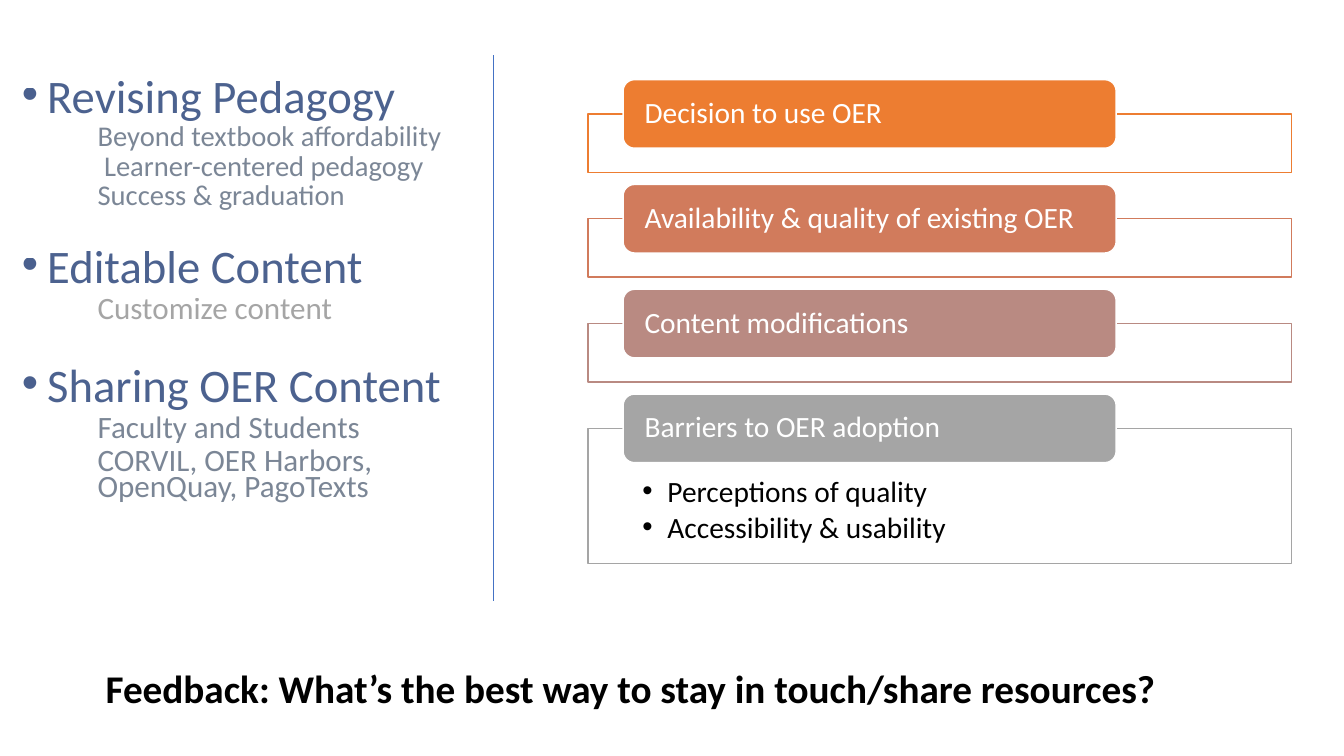
from pptx import Presentation
from pptx.dml.color import RGBColor
from pptx.enum.shapes import MSO_CONNECTOR, MSO_SHAPE
from pptx.enum.text import MSO_ANCHOR, PP_ALIGN
from pptx.oxml.ns import qn
from pptx.util import Inches, Pt
from lxml import etree

COLORS = {"navy": "002060", "slate": "44546A", "gray": "808080", "white": "FFFFFF",
          "black": "000000", "blue": "4472C4"}
FONT = "Calibri"

# heading, space before it, detail colour, detail size, space before details, details
TOPICS = [
    ("Revising Pedagogy", 0, "slate", 20.4, 4,
     ["Beyond textbook affordability", " Learner-centered pedagogy", "Success & graduation"]),
    ("Editable Content", 30, "gray", 22.2, 5, ["Customize content"]),
    ("Sharing OER Content", 33, "slate", 22.2, 5,
     ["Faculty and Students", "CORVIL, OER Harbors, OpenQuay, PagoTexts"]),
]
# title, colour, bullets
STEPS = [
    ("Decision to use OER", "ED7D31", []),
    ("Availability & quality of existing OER", "D17B5C", []),
    ("Content modifications", "B98A82", []),
    ("Barriers to OER adoption", "A5A5A5",
     ["Perceptions of quality", "Accessibility & usability"]),
]
QUESTION = "Feedback: What’s the best way to stay in touch/share resources?"

SLIDE_W, SLIDE_H = 13.33, 7.5
TOPICS_BOX = (0.12, 0.77, 4.6, 4.4)
DIVIDER_X, DIVIDER_TOP, DIVIDER_BOTTOM = 4.89, 0.55, 5.96
QUESTION_BOX = (0.95, 6.54, 10.73, 0.57)
FRAME_X, FRAME_W, FRAME_H, OPEN_FRAME_H = 5.83, 6.98, 0.58, 1.34
TAB_X, TAB_W, TAB_H = 6.18, 4.89, 0.68
STEP_TOP, STEP_PITCH = 0.79, 1.04


def style(paragraph, size, color, alpha=None):
    font = paragraph.font
    font.name, font.size = FONT, Pt(size)
    font.color.rgb = RGBColor.from_string(color)
    if alpha:
        rgb = paragraph._p.pPr.find(".//" + qn("a:srgbClr"))
        etree.SubElement(rgb, qn("a:alpha")).set("val", str(alpha * 1000))


def indent(paragraph, left, bullet=False):
    """Set the left margin; a bullet hangs a quarter inch before it."""
    props = paragraph._p.get_or_add_pPr()
    props.set("marL", str(Inches(left)))
    props.set("indent", str(Inches(-0.25 if bullet else 0)))
    if bullet:
        mark = etree.Element(qn("a:buChar"), char="•")
        font = etree.Element(qn("a:buFont"), typeface="Arial")
        defaults = props.find(qn("a:defRPr"))
        defaults.addprevious(font)
        defaults.addprevious(mark)


def add_paragraph(frame, text):
    first = frame.paragraphs[0]
    paragraph = frame.add_paragraph() if first.runs else first
    paragraph.add_run().text = text
    paragraph.alignment = PP_ALIGN.LEFT
    return paragraph


def add_text_box(slide, box):
    frame = slide.shapes.add_textbox(*map(Inches, box)).text_frame
    frame.word_wrap = True
    return frame


def add_panel(slide, kind, box, fill, line, margins):
    panel = slide.shapes.add_shape(kind, *map(Inches, box))
    panel.shadow.inherit = False
    panel.fill.solid()
    panel.fill.fore_color.rgb = RGBColor.from_string(fill)
    panel.line.color.rgb = RGBColor.from_string(line)
    panel.line.width = Pt(1)
    frame = panel.text_frame
    frame.word_wrap = True
    frame.margin_left = frame.margin_right = Inches(margins[0])
    frame.margin_top, frame.margin_bottom = Inches(margins[1]), Inches(margins[2])
    return frame


def add_topics(slide):
    frame = add_text_box(slide, TOPICS_BOX)
    for heading, gap, color, size, detail_gap, details in TOPICS:
        title = add_paragraph(frame, heading)
        title.line_spacing, title.space_before = 0.7, Pt(gap)
        style(title, 33.3, COLORS["navy"], 70)
        indent(title, 0.25, bullet=True)
        for detail in details:
            line = add_paragraph(frame, detail)
            line.line_spacing, line.space_before = 0.7, Pt(detail_gap)
            style(line, size, COLORS[color], 70)
            indent(line, 0.75)


def add_step(slide, row, title, color, bullets):
    top = STEP_TOP + row * STEP_PITCH
    height = OPEN_FRAME_H if bullets else FRAME_H
    body = add_panel(slide, MSO_SHAPE.RECTANGLE, (FRAME_X, top + TAB_H / 2, FRAME_W, height),
                     COLORS["white"], color, (0.54, 0.48, 0.16))
    body.vertical_anchor = MSO_ANCHOR.TOP
    for bullet in bullets:
        line = add_paragraph(body, bullet)
        line.line_spacing, line.space_after = 0.9, Pt(3)
        style(line, 21, COLORS["black"])
        indent(line, 0.25, bullet=True)
    tab = add_panel(slide, MSO_SHAPE.ROUNDED_RECTANGLE, (TAB_X, top, TAB_W, TAB_H),
                    color, COLORS["white"], (0.18, 0, 0))
    tab.vertical_anchor = MSO_ANCHOR.MIDDLE
    label = add_paragraph(tab, title)
    label.line_spacing = 0.9
    style(label, 21, COLORS["white"])


def add_divider(slide):
    ends = (DIVIDER_X, DIVIDER_TOP, DIVIDER_X, DIVIDER_BOTTOM)
    divider = slide.shapes.add_connector(MSO_CONNECTOR.STRAIGHT, *map(Inches, ends))
    divider.line.color.rgb = RGBColor.from_string(COLORS["blue"])
    divider.line.width = Pt(0.5)
    etree.SubElement(divider._element.spPr, qn("a:effectLst"))


def main():
    deck = Presentation()
    deck.slide_width, deck.slide_height = Inches(SLIDE_W), Inches(SLIDE_H)
    slide = deck.slides.add_slide(deck.slide_layouts[6])
    add_topics(slide)
    for row, step in enumerate(STEPS):
        add_step(slide, row, *step)
    add_divider(slide)
    question = add_paragraph(add_text_box(slide, QUESTION_BOX), QUESTION)
    style(question, 28, COLORS["black"])
    question.font.bold = True
    deck.save("out.pptx")


if __name__ == "__main__":
    main()
